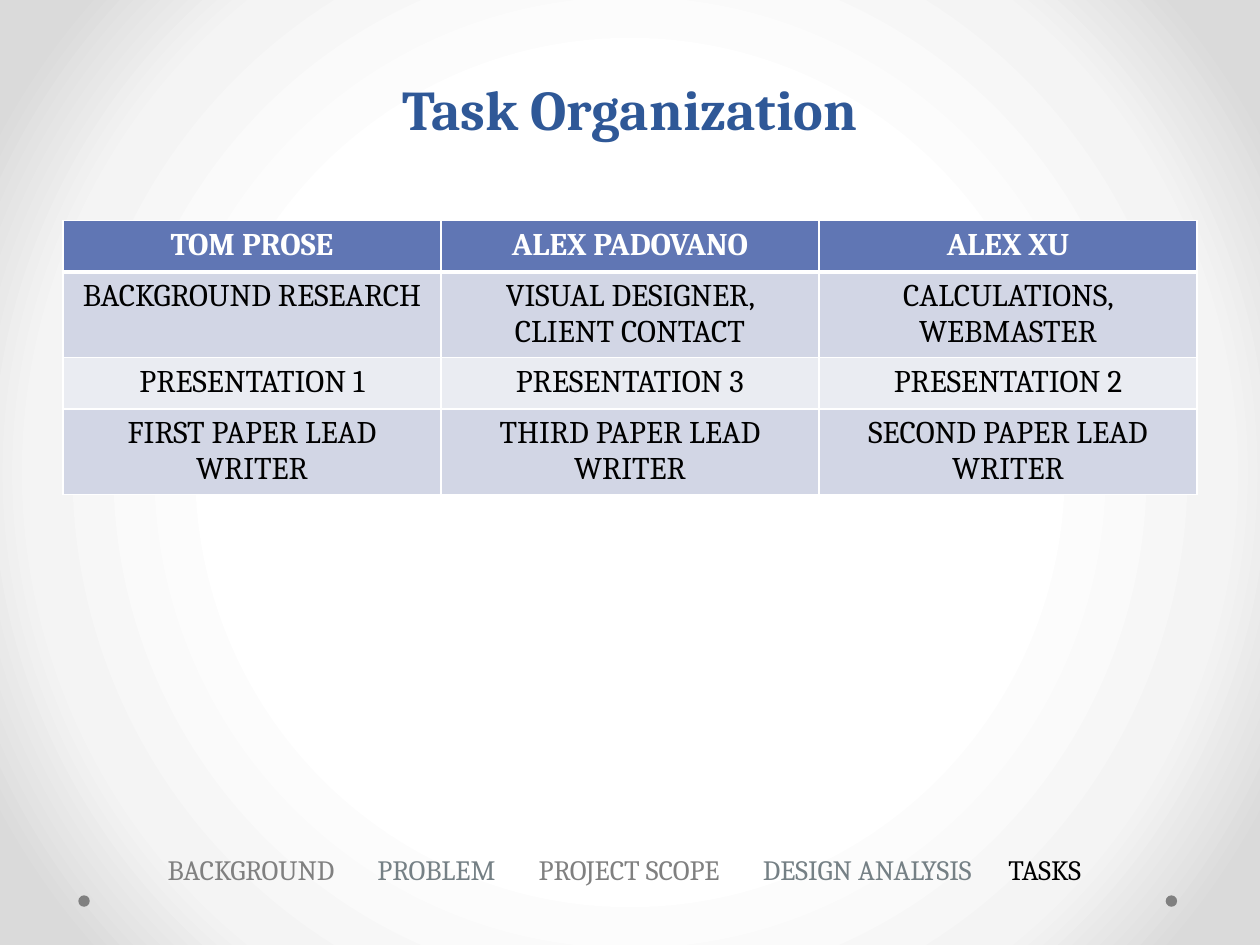
"""Build the Task Organization slide: a table of duties above a section tracker."""
from lxml import etree
from pptx import Presentation
from pptx import util as u
from pptx.dml.color import RGBColor
from pptx.enum import shapes, text
from pptx.oxml import ns

TITLE = "Task Organization"
DUTIES = [
    ("TOM PROSE", "ALEX PADOVANO", "ALEX XU"),
    ("BACKGROUND RESEARCH", "VISUAL DESIGNER, CLIENT CONTACT", "CALCULATIONS, WEBMASTER"),
    ("PRESENTATION 1", "PRESENTATION 3", "PRESENTATION 2"),
    ("FIRST PAPER LEAD WRITER", "THIRD PAPER LEAD WRITER", "SECOND PAPER LEAD WRITER"),
]
ROW_HEIGHTS = [1.03, 1.73, 1.03, 1.73]
SECTIONS = [
    ("BACKGROUND", "grey", 0),
    ("PROBLEM", "slate", 4.23),
    ("PROJECT SCOPE", "grey", 7.48),
    ("DESIGN ANALYSIS", "slate", 12),
    ("TASKS", "black", 16.95),
]
BACKGROUND_STOPS = [(50, "FFFFFF"), (76, "F4F4F4"), (92, "DADADA")]
THEME = {
    "font": "Cambria",
    "sizes": {"title": 32, "table": 18, "section": 16},
    "colours": {"title": "2F5897", "white": "FFFFFF", "black": "000000",
                "grey": "808080", "slate": "758085", "header": "6076B4",
                "bands": ("EAECF2", "D2D6E5")},
}
COLOURS, SIZES = THEME["colours"], THEME["sizes"]


def add_text(paragraph, content, size, colour, bold=False, align=text.PP_ALIGN.CENTER):
    paragraph.alignment = align
    run = paragraph.add_run()
    run.text = content
    run.font.name = THEME["font"]
    run.font.size = u.Pt(size)
    run.font.bold = bold
    run.font.color.rgb = RGBColor.from_string(colour)


def add_element(parent, tag, **attributes):
    element = etree.SubElement(parent, ns.qn(tag))
    for name, value in attributes.items():
        element.set(name, str(value))
    return element


def add_background(slide):
    slide.background.fill.gradient()
    gradient = slide.background._cSld.find(".//" + ns.qn("a:gradFill"))
    for child in list(gradient):
        gradient.remove(child)
    stops = add_element(gradient, "a:gsLst")
    for position, colour in BACKGROUND_STOPS:
        stop = add_element(stops, "a:gs", pos=position * 1000)
        add_element(stop, "a:srgbClr", val=colour)
    circle = add_element(gradient, "a:path", path="circle")
    add_element(circle, "a:fillToRect", l=50000, t=50000, r=50000, b=50000)


def add_dots(slide):
    for left in (1.58, 23.5):
        dot = slide.shapes.add_shape(shapes.MSO_SHAPE.OVAL, u.Cm(left), u.Cm(18.05),
                                     u.Cm(0.23), u.Cm(0.23))
        dot.shadow.inherit = False
        dot.fill.solid()
        dot.fill.fore_color.rgb = RGBColor.from_string(COLOURS["grey"])
        dot.line.fill.background()


def add_title(slide):
    title = slide.shapes.title
    title.left, title.top = u.Cm(1.27), u.Cm(-1.47)
    title.width, title.height = u.Cm(22.86), u.Cm(4.45)
    title.text_frame.vertical_anchor = text.MSO_ANCHOR.BOTTOM
    paragraph = title.text_frame.paragraphs[0]
    paragraph.line_spacing = u.Pt(58)
    add_text(paragraph, TITLE, SIZES["title"], COLOURS["title"], bold=True)


def set_borders(cell, widths):
    properties = cell._tc.get_or_add_tcPr()
    for side, width in widths.items():
        line = add_element(properties, f"a:ln{side}", w=u.Pt(width))
        add_element(add_element(line, "a:solidFill"), "a:srgbClr", val=COLOURS["white"])


def add_duties(slide):
    table = slide.shapes.add_table(len(DUTIES), len(DUTIES[0]), u.Cm(1.27), u.Cm(4.45),
                                   u.Cm(22.86), u.Cm(sum(ROW_HEIGHTS))).table
    for row, duties in enumerate(DUTIES):
        header = row == 0
        table.rows[row].height = u.Cm(ROW_HEIGHTS[row])
        for column, duty in enumerate(duties):
            cell = table.cell(row, column)
            set_borders(cell, {"L": 1, "R": 1, "T": 3 if row == 1 else 1,
                               "B": 3 if header else 1})
            cell.fill.solid()
            fill = COLOURS["header"] if header else COLOURS["bands"][row % 2]
            cell.fill.fore_color.rgb = RGBColor.from_string(fill)
            add_text(cell.text_frame.paragraphs[0], duty, SIZES["table"],
                     COLOURS["white" if header else "black"], bold=header)


def add_sections(slide):
    frame = slide.shapes.add_textbox(u.Cm(0.43), u.Cm(17.07), u.Cm(24.33), u.Cm(0.94)).text_frame
    frame.word_wrap = True
    frame.margin_left = u.Cm(2.95)
    paragraph = frame.paragraphs[0]
    tabs = add_element(paragraph._p.get_or_add_pPr(), "a:tabLst")
    for index, (name, colour, offset) in enumerate(SECTIONS):
        if index:
            add_element(tabs, "a:tab", pos=u.Cm(offset), algn="l")
        add_text(paragraph, "\t" + name if index else name, SIZES["section"],
                 COLOURS[colour], align=text.PP_ALIGN.LEFT)


def main():
    presentation = Presentation()
    presentation.slide_width, presentation.slide_height = u.Cm(25.4), u.Cm(19.05)
    slide = presentation.slides.add_slide(presentation.slide_layouts[5])
    add_background(slide)
    add_dots(slide)
    add_title(slide)
    add_duties(slide)
    add_sections(slide)
    presentation.save("out.pptx")


if __name__ == "__main__":
    main()
